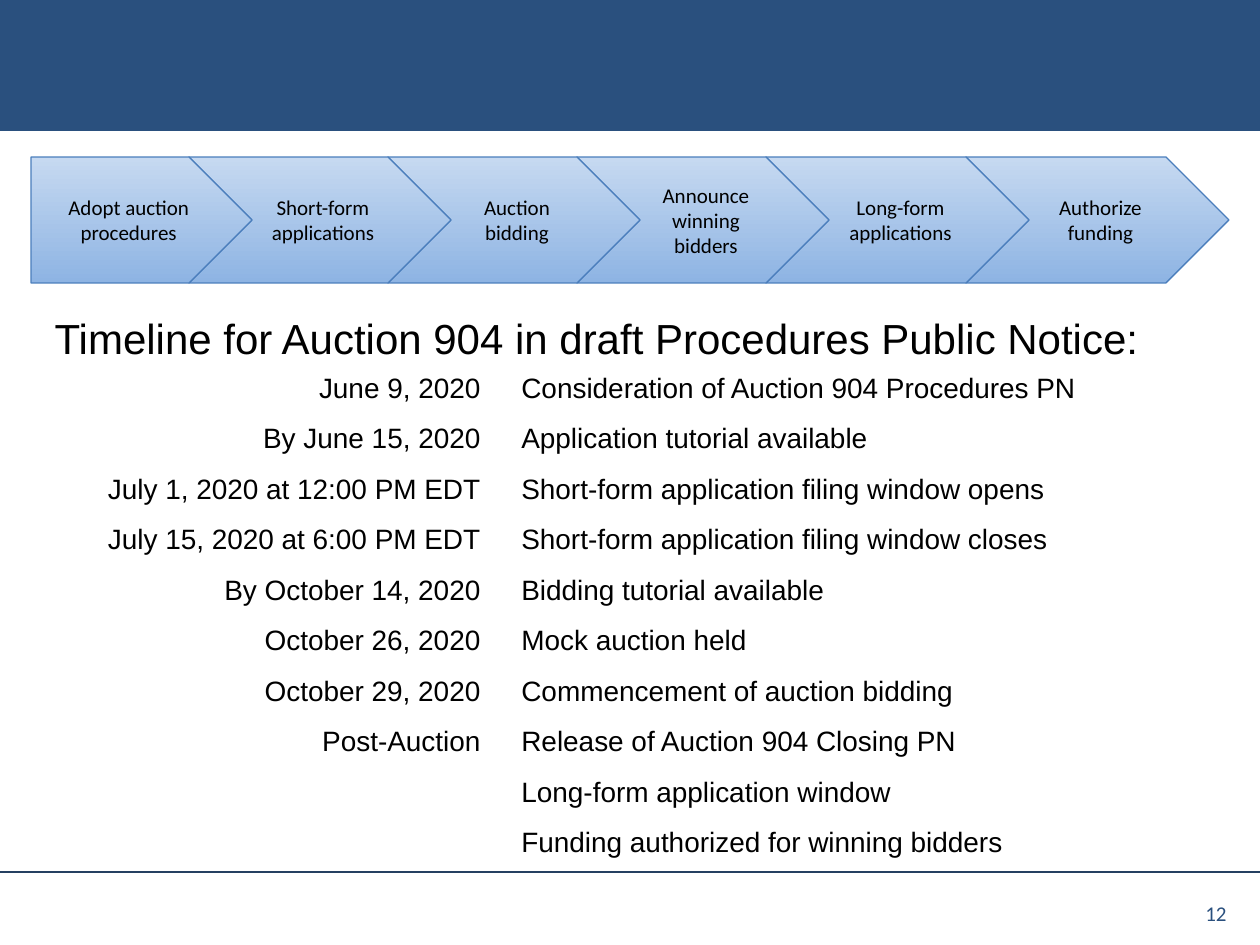
from pptx import Presentation
from pptx.dml.color import RGBColor
from pptx.enum.shapes import MSO_CONNECTOR, MSO_SHAPE
from pptx.enum.text import MSO_ANCHOR, MSO_AUTO_SIZE, PP_ALIGN
from pptx.oxml.ns import qn
from pptx.util import Emu, Pt
from lxml.etree import SubElement

NAVY = RGBColor(0x2A, 0x50, 0x7E)
RULE = RGBColor(0x25, 0x40, 0x61)
EDGE = RGBColor(0x4B, 0x7E, 0xBC)
DEEP = RGBColor(0x8E, 0xB4, 0xE3)
PALE = RGBColor(0xC6, 0xD9, 0xF1)
BLACK = RGBColor(0, 0, 0)


def px(*vals):
    """Turn lengths at 126 px to the inch into EMU."""
    return [Emu(round(v * 914400 / 126)) for v in vals]


def write(shape, text, size=16, font="Arial", color=BLACK,
          align=PP_ALIGN.LEFT, anchor=MSO_ANCHOR.TOP, wrap=True):
    frame = shape.text_frame
    frame.text = text
    frame.word_wrap = wrap
    frame.auto_size = MSO_AUTO_SIZE.NONE
    frame.vertical_anchor = anchor
    para = frame.paragraphs[0]
    para.alignment = align
    para.font.size = Pt(size)
    para.font.name = font
    para.font.color.rgb = color


prs = Presentation()
prs.slide_width, prs.slide_height = px(1260, 945)
slide = prs.slides.add_slide(prs.slide_layouts[5])
shapes = slide.shapes

# Header band and footer rule
band = shapes.add_shape(MSO_SHAPE.RECTANGLE, *px(0, 0, 1260, 131))
band.shadow.inherit = False
band.fill.solid()
band.fill.fore_color.rgb = NAVY
band.line.fill.background()

rule = shapes.add_connector(MSO_CONNECTOR.STRAIGHT, *px(0, 872, 1260, 872))
rule.line.color.rgb = RULE
rule.line.width = Pt(1.5)
SubElement(rule._element.spPr, qn("a:effectLst"))

# Process steps: each point reaches into the next step, first one in front
steps = ["Adopt auction procedures", "Short-form applications",
         "Auction bidding", "Announce winning bidders",
         "Long-form applications", "Authorize funding"]
lefts = [31, 189, 388, 577, 766, 966, 1166]
point = 63
for i in reversed(range(len(steps))):
    kind = MSO_SHAPE.CHEVRON if i else MSO_SHAPE.PENTAGON
    width = lefts[i + 1] - lefts[i] + point
    step = shapes.add_shape(kind, *px(lefts[i], 157, width, 126))
    step.shadow.inherit = False
    step.fill.gradient()
    step.fill.gradient_angle = 90
    for stop, color in zip(step.fill.gradient_stops, (DEEP, PALE)):
        stop.color.rgb = color
    step.line.color.rgb = EDGE
    step.line.width = Pt(0.75)
    frame = step.text_frame
    (frame.margin_left, frame.margin_top,
     frame.margin_right, frame.margin_bottom) = px(6, 6, 0, 6)
    write(step, steps[i], size=12, font="Calibri",
          align=PP_ALIGN.CENTER, anchor=MSO_ANCHOR.MIDDLE)

# Title
title = shapes.title
title.left, title.top, title.width, title.height = px(42, 306, 1120, 63)
write(title, "Timeline for Auction 904 in draft Procedures Public Notice:",
      size=24, wrap=False)

# Timeline
events = [
    ("June 9, 2020", "Consideration of Auction 904 Procedures PN"),
    ("By June 15, 2020", "Application tutorial available"),
    ("July 1, 2020 at 12:00 PM EDT",
     "Short-form application filing window opens"),
    ("July 15, 2020 at 6:00 PM EDT",
     "Short-form application filing window closes"),
    ("By October 14, 2020", "Bidding tutorial available"),
    ("October 26, 2020", "Mock auction held"),
    ("October 29, 2020", "Commencement of auction bidding"),
    ("Post-Auction", "Release of Auction 904 Closing PN"),
    ("", "Long-form application window"),
    ("", "Funding authorized for winning bidders"),
]
for i, (date, event) in enumerate(events):
    top = 364 + i * 101 // 2
    if date:
        box = shapes.add_textbox(*px(63, top, 430, 45))
        write(box, date, align=PP_ALIGN.RIGHT)
    box = shapes.add_textbox(*px(509, top, 667, 45))
    write(box, event)

# Page number
page = shapes.add_textbox(*px(945, 882, 294, 50))
write(page, "12", size=12, font="Calibri", color=NAVY,
      align=PP_ALIGN.RIGHT, anchor=MSO_ANCHOR.BOTTOM)

prs.save("out.pptx")
